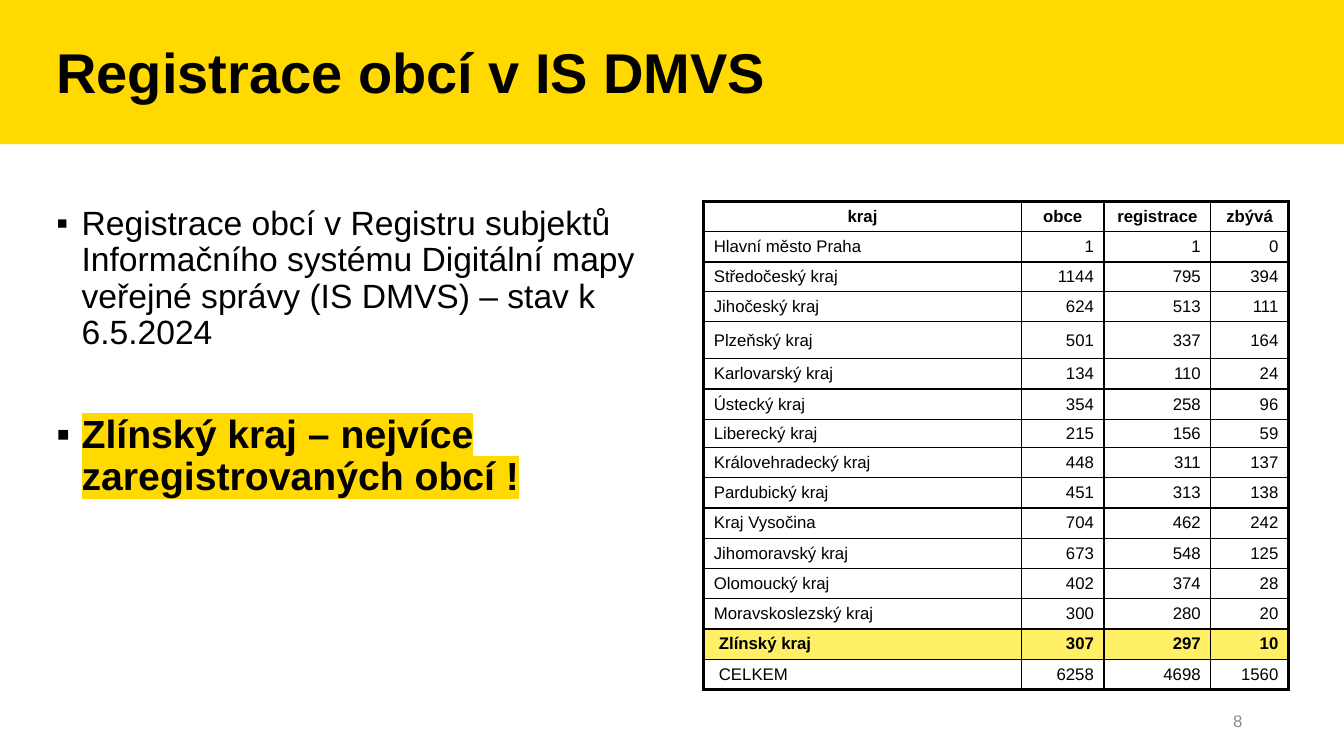
from lxml.etree import SubElement
from pptx import Presentation
from pptx.dml.color import RGBColor
from pptx.enum.shapes import MSO_SHAPE
from pptx.enum.text import MSO_ANCHOR, MSO_AUTO_SIZE, PP_ALIGN
from pptx.oxml.ns import qn
from pptx.util import Inches, Pt

YELLOW, PALE_YELLOW, BLACK, GREY = "FFD900", "FEEF66", "000000", "8C8C8C"
THIN, THICK = 1, 2.25
COLUMN_WIDTHS = [3.15, 0.82, 1.06, 0.77]
ROW_HEIGHT = 0.3
SPECIAL_HEIGHTS = {"Středočeský kraj": 0.29, "Plzeňský kraj": 0.37, "Liberecký kraj": 0.28}
REGIONS = [
    ("kraj", "obce", "registrace", "zbývá"),
    ("Hlavní město Praha", 1, 1, 0),
    ("Středočeský kraj", 1144, 795, 394),
    ("Jihočeský kraj", 624, 513, 111),
    ("Plzeňský kraj", 501, 337, 164),
    ("Karlovarský kraj", 134, 110, 24),
    ("Ústecký kraj", 354, 258, 96),
    ("Liberecký kraj", 215, 156, 59),
    ("Královehradecký kraj", 448, 311, 137),
    ("Pardubický kraj", 451, 313, 138),
    ("Kraj Vysočina", 704, 462, 242),
    ("Jihomoravský kraj", 673, 548, 125),
    ("Olomoucký kraj", 402, 374, 28),
    ("Moravskoslezský kraj", 300, 280, 20),
    ("Zlínský kraj", 307, 297, 10),
    ("CELKEM", 6258, 4698, 1560),
]


def rgb(value):
    return RGBColor.from_string(value)


def write(paragraph, text, size=12, color=BLACK, bold=False, align=PP_ALIGN.LEFT,
          line_spacing=None, space_before=0, highlight=None):
    paragraph.alignment = align
    paragraph.line_spacing = line_spacing
    paragraph.space_before = Pt(space_before)
    run = paragraph.add_run()
    run.text = text
    run.font.size = Pt(size)
    run.font.bold = bold
    run.font.color.rgb = rgb(color)
    if highlight:
        mark = SubElement(run.font._element, qn("a:highlight"))
        SubElement(mark, qn("a:srgbClr"), val=highlight)
    run.font.name = "Arial"


def place(shape, left, top, width, height):
    shape.left, shape.top = Inches(left), Inches(top)
    shape.width, shape.height = Inches(width), Inches(height)


def add_bullet(paragraph, char="▪", indent=0.25):
    properties = paragraph._p.get_or_add_pPr()
    properties.set("marL", str(Inches(indent)))
    properties.set("indent", str(-Inches(indent)))
    SubElement(properties, qn("a:buFont"), typeface="Arial")
    SubElement(properties, qn("a:buChar"), char=char)


def add_header_band(slide, left, top, width, height):
    band = slide.shapes.add_shape(MSO_SHAPE.RECTANGLE, Inches(left), Inches(top),
                                  Inches(width), Inches(height))
    band.shadow.inherit = False
    band.fill.solid()
    band.fill.fore_color.rgb = rgb(YELLOW)
    band.line.fill.background()
    slide.shapes._spTree.insert(2, band._element)  # behind the title


def fill_title(slide, left, top, width, height):
    title = slide.shapes.title
    place(title, left, top, width, height)
    title.text_frame.auto_size = MSO_AUTO_SIZE.NONE
    title.text_frame.vertical_anchor = MSO_ANCHOR.TOP
    write(title.text_frame.paragraphs[0], "Registrace obcí v IS DMVS",
          size=40, bold=True, line_spacing=0.9)


def fill_bullets(slide, left, top, width, height):
    body = slide.placeholders[1]
    place(body, left, top, width, height)
    frame = body.text_frame
    frame.auto_size = MSO_AUTO_SIZE.NONE
    frame.vertical_anchor = MSO_ANCHOR.TOP
    status, leader = frame.paragraphs[0], frame.add_paragraph()
    write(status, "Registrace obcí v Registru subjektů Informačního systému Digitální "
          "mapy veřejné správy (IS DMVS) – stav k 6.5.2024",
          size=24, line_spacing=0.9, space_before=45)
    write(leader, "Zlínský kraj – nejvíce zaregistrovaných obcí !",
          size=28, bold=True, line_spacing=0.9, space_before=45, highlight=YELLOW)
    for paragraph in (status, leader):
        add_bullet(paragraph)


def set_borders(cell, **widths):
    """Draw black borders; widths are points keyed by side: L, R, T, B."""
    properties = cell._tc.get_or_add_tcPr()
    for side, width in widths.items():
        line = SubElement(properties, qn(f"a:ln{side}"), w=str(Pt(width)))
        SubElement(SubElement(line, qn("a:solidFill")), qn("a:srgbClr"), val=BLACK)


def add_region_table(slide, left, top, width, height):
    table = slide.shapes.add_table(len(REGIONS), len(COLUMN_WIDTHS), Inches(left),
                                   Inches(top), Inches(width), Inches(height)).table
    table.first_row = table.horz_banding = False
    for column, column_width in zip(table.columns, COLUMN_WIDTHS):
        column.width = Inches(column_width)
    last_row, last_column = len(REGIONS) - 1, len(COLUMN_WIDTHS) - 1
    for r, region in enumerate(REGIONS):
        table.rows[r].height = Inches(SPECIAL_HEIGHTS.get(region[0], ROW_HEIGHT))
        highlighted = region[0] == "Zlínský kraj"
        for c, value in enumerate(region):
            cell = table.cell(r, c)
            cell.vertical_anchor = MSO_ANCHOR.MIDDLE
            cell.margin_top = cell.margin_bottom = 0
            indented = c == 0 and r >= last_row - 1
            cell.margin_left = Inches(0.15 if indented else 0.1)
            cell.margin_right = Inches(0.1)
            set_borders(cell, L=THICK if c == 0 else THIN,
                        R=THICK if c == last_column else THIN,
                        T=THICK if r == 0 else THIN,
                        B=THICK if r == last_row else THIN)
            if highlighted:
                cell.fill.solid()
                cell.fill.fore_color.rgb = rgb(PALE_YELLOW)
            else:
                cell.fill.background()
            align = PP_ALIGN.CENTER if r == 0 else PP_ALIGN.RIGHT if c else PP_ALIGN.LEFT
            write(cell.text_frame.paragraphs[0], str(value),
                  bold=r == 0 or highlighted, align=align)


def add_page_number(slide, left, top, width, height):
    frame = slide.shapes.add_textbox(Inches(left), Inches(top), Inches(width),
                                     Inches(height)).text_frame
    frame.word_wrap = True
    frame.vertical_anchor = MSO_ANCHOR.MIDDLE
    write(frame.paragraphs[0], "8", color=GREY, align=PP_ALIGN.RIGHT)


def main():
    presentation = Presentation()
    presentation.slide_width, presentation.slide_height = Inches(13.33), Inches(7.5)
    slide = presentation.slides.add_slide(presentation.slide_layouts[1])
    add_header_band(slide, 0, 0, 13.33, 1.43)
    fill_title(slide, 0.46, 0.4, 12.32, 1.02)
    fill_bullets(slide, 0.46, 2, 6.12, 4.76)
    add_region_table(slide, 6.98, 2, 5.8, 4.81)
    add_page_number(slide, 9.42, 6.95, 3, 0.4)
    presentation.save("out.pptx")


if __name__ == "__main__":
    main()
